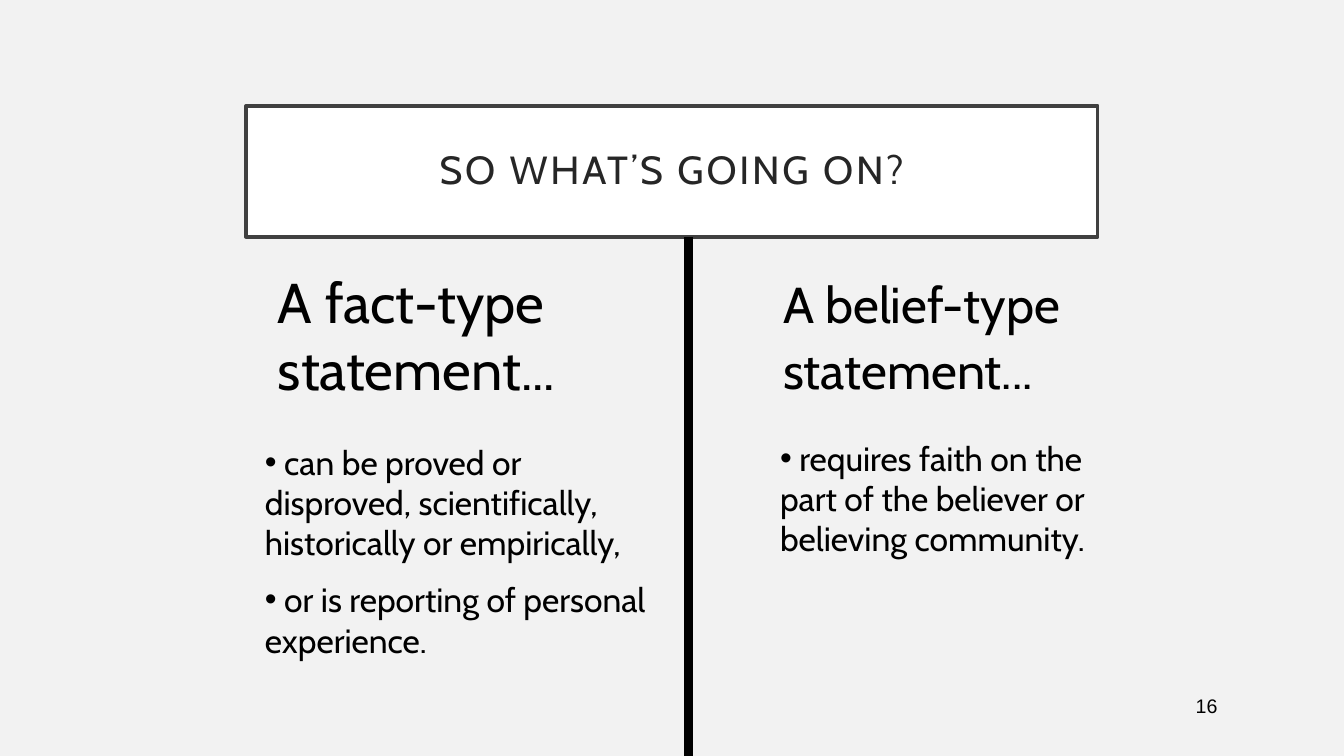
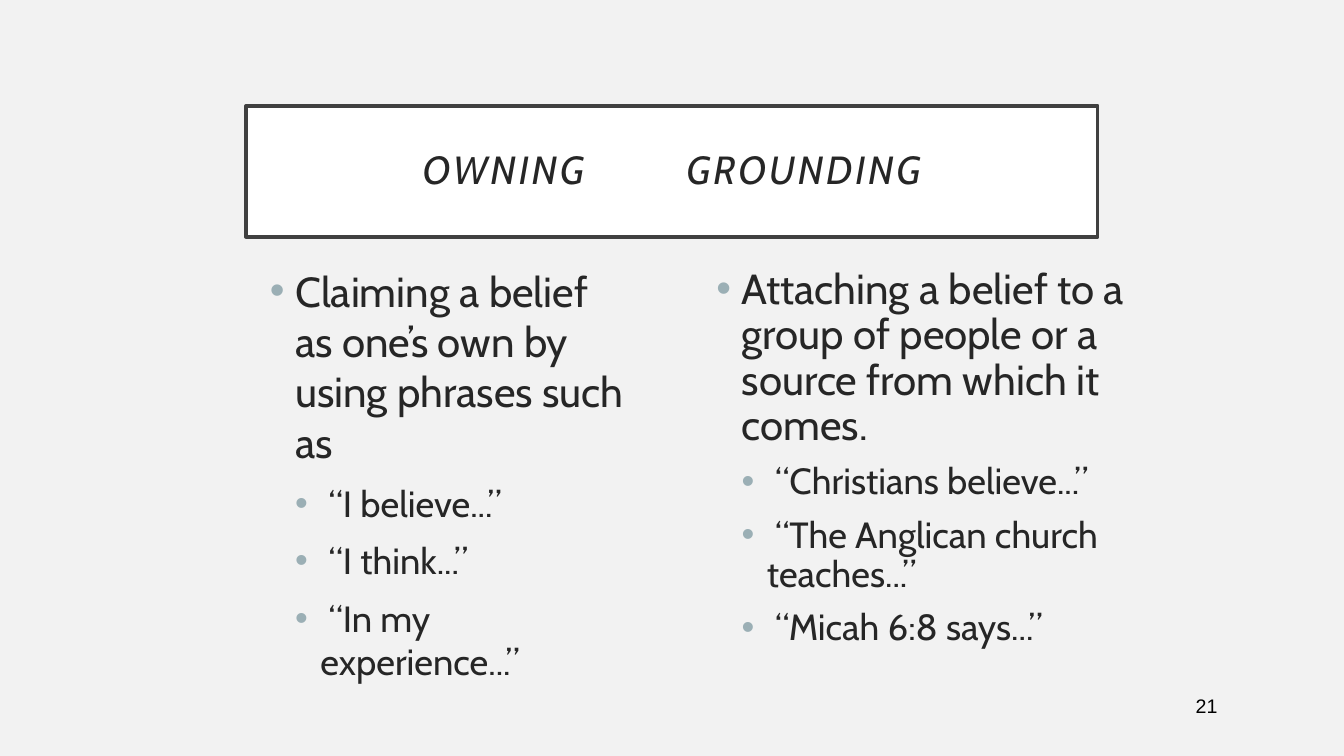
from dataclasses import dataclass
from typing import NamedTuple, Optional

from lxml import etree
from pptx import Presentation
from pptx.dml.color import RGBColor
from pptx.enum import shapes, text
from pptx.oxml import ns
from pptx.util import Inches, Pt

CELL = 0.1  # inches per grid cell
COLUMNS, ROWS = 133.33, 75


@dataclass(frozen=True)
class Theme:
    """Colours, fonts and type sizes shared by all slides."""
    page: str = "F2F2F2"
    panel: str = "FFFFFF"
    frame: str = "404040"
    ink: str = "262626"
    black: str = "000000"
    bullet: str = "9BAFB5"
    font: str = "Cabin"
    plain_font: str = "Arial"
    title: int = 28
    number: int = 14
    fact_heading: int = 40
    belief_heading: int = 36
    statement: int = 24
    point: int = 30
    quote: int = 26
    frame_width: float = 2.5
    divider_width: float = 6
    tracking: int = 200  # hundredths of a point


THEME = Theme()


class Area(NamedTuple):
    """Left, top, width and height in grid cells."""
    left: float
    top: float
    width: float
    height: float


@dataclass(frozen=True)
class Style:
    size: int
    color: str = THEME.ink
    font: str = THEME.font
    before: float = 0
    spacing: float = 1
    bullet: Optional[str] = None
    margin: float = 0  # grid cells
    hang: float = 0
    centred: bool = False
    italic: bool = False
    tracking: int = 0


class Para(NamedTuple):
    words: str
    style: Style


class TextBlock(NamedTuple):
    area: Area
    paras: list[Para]


TITLE_AREA = Area(24.4, 10.5, 84.5, 13)
NUMBER_AREA = Area(117.7, 68, 4, 4)
DIVIDER_COLUMN = 68.3


def cells(count: float) -> int:
    return Inches(count * CELL)


def place(area: Area) -> list[int]:
    return [cells(length) for length in area]


def rgb(value: str) -> RGBColor:
    return RGBColor.from_string(value)


def add_bullet(properties, color: str) -> None:
    tint = etree.SubElement(properties, ns.qn("a:buClr"))
    etree.SubElement(tint, ns.qn("a:srgbClr"), val=color)
    etree.SubElement(properties, ns.qn("a:buFont"), typeface=THEME.plain_font)
    etree.SubElement(properties, ns.qn("a:buChar"), char="•")


def format_para(para, style: Style) -> None:
    properties = para._p.get_or_add_pPr()
    if style.bullet:
        properties.set("marL", str(cells(style.margin)))
        properties.set("indent", str(-cells(style.hang)))
        add_bullet(properties, style.bullet)
    para.alignment = text.PP_ALIGN.CENTER if style.centred else text.PP_ALIGN.LEFT
    para.line_spacing = style.spacing
    para.space_before = Pt(style.before)
    font = para.font
    font.name, font.size, font.italic = style.font, Pt(style.size), style.italic
    font.color.rgb = rgb(style.color)
    if style.tracking:
        properties.find(ns.qn("a:defRPr")).set("spc", str(style.tracking))


def write(frame, paras: list[Para]) -> None:
    frame.word_wrap = True
    for index, (words, style) in enumerate(paras):
        para = frame.add_paragraph() if index else frame.paragraphs[0]
        para.add_run().text = words
        format_para(para, style)


def add_text(page, block: TextBlock) -> None:
    box = page.shapes.add_textbox(*place(block.area))
    write(box.text_frame, block.paras)


def add_label(page, kind, area: Area, para: Para, insets: tuple[float, float]):
    """Add an unfilled, unlined shape with one vertically centred paragraph."""
    shape = page.shapes.add_shape(kind, *place(area))
    shape.shadow.inherit = False
    shape.fill.background()
    shape.line.fill.background()
    frame = shape.text_frame
    frame.vertical_anchor = text.MSO_ANCHOR.MIDDLE
    frame.margin_left = frame.margin_right = cells(insets[0])
    frame.margin_top = frame.margin_bottom = cells(insets[1])
    write(frame, [para])
    return shape


def add_title(page, words: str, italic: bool) -> None:
    style = Style(THEME.title, spacing=0.9, centred=True, italic=italic,
                  tracking=THEME.tracking)
    panel = add_label(page, shapes.MSO_SHAPE.RECTANGLE, TITLE_AREA,
                      Para(words, style), (2, 2))
    panel.fill.solid()
    panel.fill.fore_color.rgb = rgb(THEME.panel)
    panel.line.color.rgb = rgb(THEME.frame)
    panel.line.width = Pt(THEME.frame_width)


def add_number(page, number: int) -> None:
    style = Style(THEME.number, THEME.black, THEME.plain_font, centred=True)
    add_label(page, shapes.MSO_SHAPE.OVAL, NUMBER_AREA,
              Para(str(number), style), (0.2, 0.5))


def add_divider(page) -> None:
    """Draw the vertical rule from the title panel to the slide's foot."""
    column = cells(DIVIDER_COLUMN)
    top = cells(TITLE_AREA.top + TITLE_AREA.height)
    rule = page.shapes.add_connector(shapes.MSO_CONNECTOR.STRAIGHT,
                                     column, top, column, cells(ROWS))
    rule.line.color.rgb = rgb(THEME.black)
    rule.line.width = Pt(THEME.divider_width)
    etree.SubElement(rule._element.spPr, ns.qn("a:effectLst"))


def add_page(deck, title: str, number: int, blocks: list[TextBlock],
             italic: bool = False):
    page = deck.slides.add_slide(deck.slide_layouts[6])
    add_title(page, title, italic)
    for block in blocks:
        add_text(page, block)
    add_number(page, number)
    return page


def heading(words: str, size: int, spacing: float = 1) -> list[Para]:
    return [Para(words, Style(size, THEME.black, before=size / 2, spacing=spacing))]


def statements(*lines: str) -> list[Para]:
    style = Style(THEME.statement, THEME.black, before=THEME.statement / 2,
                  bullet=THEME.black)
    return [Para(f" {line}", style) for line in lines]


def point_with_quotes(point: str, quotes: list[str], spacing: float = 1) -> list[Para]:
    def level(size: int, margin: float) -> Style:
        return Style(size, before=10, spacing=spacing, bullet=THEME.bullet,
                     margin=margin, hang=2.5)

    quote_style = level(THEME.quote, 5)
    return [Para(point, level(THEME.point, 2.5)),
            *(Para(f" “{quote}”", quote_style) for quote in quotes)]


def main() -> None:
    deck = Presentation()
    deck.slide_width, deck.slide_height = cells(COLUMNS), cells(ROWS)
    background = deck.slide_master.background.fill
    background.solid()
    background.fore_color.rgb = rgb(THEME.page)

    comparison = add_page(deck, "SO WHAT’S GOING ON?", 16, [
        TextBlock(Area(26.6, 26, 30, 14.5),
                  heading("A fact-type statement...", THEME.fact_heading)),
        TextBlock(Area(76.7, 26, 31.7, 14),
                  heading("A belief-type statement...", THEME.belief_heading, 1.1)),
        TextBlock(Area(25.3, 43.3, 40, 23.2), statements(
            "can be proved or disproved, scientifically, historically or empirically,",
            "or is reporting of personal experience.")),
        TextBlock(Area(76.4, 42.9, 36.7, 13.1), statements(
            "requires faith on the part of the believer or believing community.")),
    ])
    add_divider(comparison)

    add_page(deck, "OWNING \t\t GROUNDING", 21, [
        TextBlock(Area(25.8, 25.8, 37.5, 47.5), point_with_quotes(
            "Claiming a belief as one’s own by using phrases such as",
            ["I believe...", "I think...", "In my experience..."])),
        TextBlock(Area(70.1, 26.1, 46.7, 47.5), point_with_quotes(
            "Attaching a belief to a group of people or a source from which it comes.",
            ["Christians believe...", "The Anglican church teaches...",
             "Micah 6:8 says..."], 0.9)),
    ], italic=True)

    deck.save("out.pptx")


if __name__ == "__main__":
    main()
